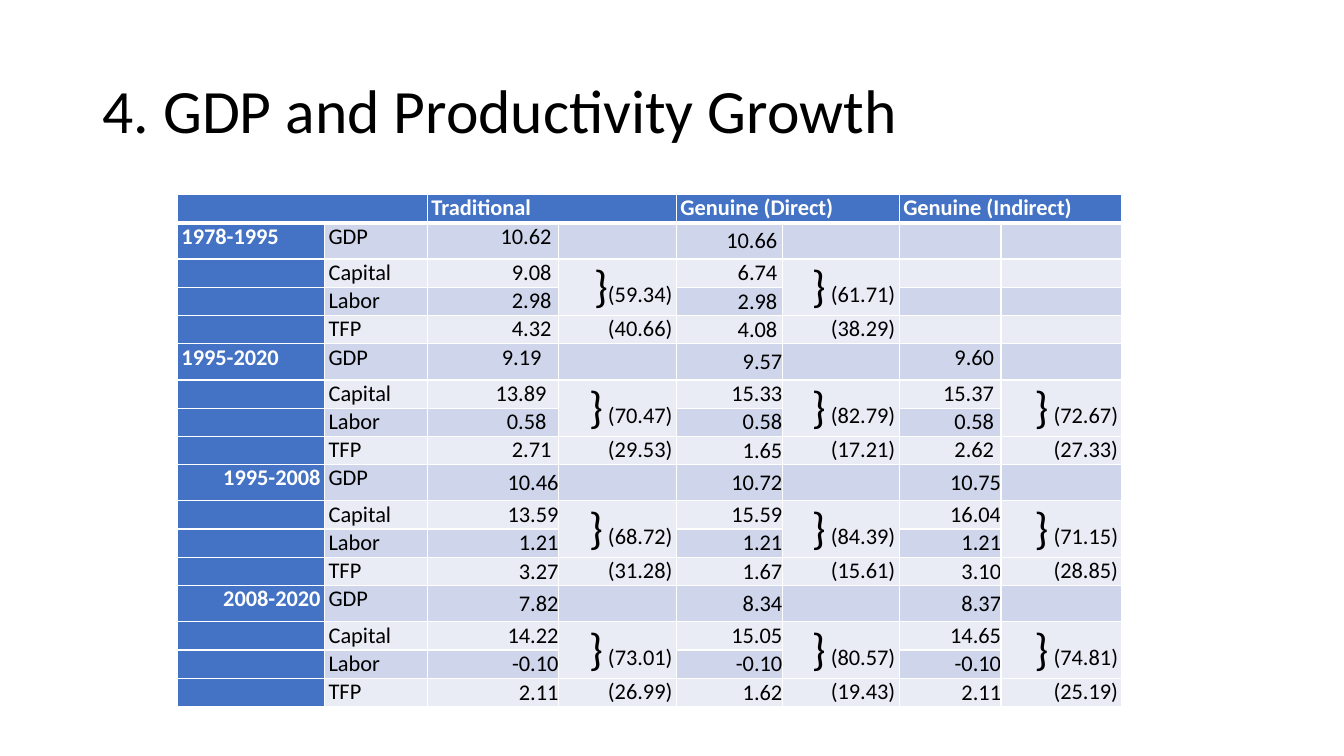
from lxml.etree import SubElement
from pptx import Presentation
from pptx.dml.color import RGBColor
from pptx.enum.text import MSO_ANCHOR as Anchor, PP_ALIGN as Align
from pptx.oxml.ns import qn
from pptx.util import Inches, Pt

TITLE = "4. GDP and Productivity Growth"
METHODS = ["Traditional", "Genuine (Direct)", "Genuine (Indirect)"]
MEASURES = ["GDP", "Capital", "Labor", "TFP"]
PERIODS = [
    ("1978-1995", Align.JUSTIFY, [
        (["10.62", "9.08", "2.98", "4.32"], "(59.34)", "(40.66)"),
        (["10.66", "6.74", "2.98", "4.08"], " (61.71)", "(38.29)"),
    ]),
    ("1995-2020", Align.JUSTIFY, [
        (["9.19", "13.89", "0.58", "2.71"], " (70.47)", "(29.53)"),
        (["9.57", "15.33", "0.58", "1.65"], " (82.79)", "(17.21)"),
        (["9.60", "15.37", "0.58", "2.62"], " (72.67)", "(27.33)"),
    ]),
    ("1995-2008", Align.RIGHT, [
        (["10.46", "13.59", "1.21", "3.27"], " (68.72)", "(31.28)"),
        (["10.72", "15.59", "1.21", "1.67"], " (84.39)", "(15.61)"),
        (["10.75", "16.04", "1.21", "3.10"], " (71.15)", "(28.85)"),
    ]),
    ("2008-2020", Align.RIGHT, [
        (["7.82", "14.22", "-0.10", "2.11"], " (73.01)", "(26.99)"),
        (["8.34", "15.05", "-0.10", "1.62"], " (80.57)", "(19.43)"),
        (["8.37", "14.65", "-0.10", "2.11"], " (74.81)", "(25.19)"),
    ]),
]
RIGHT_INSETS = {
    (0, 0): [0.07] * 4,
    (0, 1): [0.05] * 4,
    (1, 0): [0.17, 0.12, 0.12, 0.07],
    (1, 2): [0.07] * 4,
}
COLUMN_WIDTHS = [1.46, 1.02, 1.3, 1.17, 1.05, 1.16, 1.01, 1.2]
HEADER_HEIGHT = 0.28
MEASURE_HEIGHTS = [0.36, 0.28, 0.28, 0.28]
BLUE, DARK_BAND, LIGHT_BAND = "4472C4", "CFD5EA", "E9EBF5"
WHITE, BLACK = "FFFFFF", "000000"


def color(value):
    return RGBColor.from_string(value)


def write(frame, *pieces, size=16, tint=BLACK, bold=False, align=Align.RIGHT,
          anchor=Anchor.TOP, left=0.04, right=0.04, spacing=None):
    frame.margin_left, frame.margin_right = Inches(left), Inches(right)
    frame.vertical_anchor = anchor
    holder = getattr(frame, "text_frame", frame)
    holder.word_wrap = True
    para = holder.paragraphs[0]
    para.alignment = align
    if spacing:
        para.line_spacing = spacing
    for piece in pieces:
        text, points = piece if isinstance(piece, tuple) else (piece, size)
        span = para.add_run()
        span.text = text
        span.font.name = "Calibri"
        span.font.size = Pt(points)
        span.font.bold = bold
        span.font.color.rgb = color(tint)


def style_cell(cell, row, column):
    cell.margin_top = cell.margin_bottom = 0
    properties = cell._tc.get_or_add_tcPr()
    for side in "LRTB":
        thick = (row, side) in [(0, "B"), (1, "T")]
        line = SubElement(properties, qn(f"a:ln{side}"), w=str(Pt(3 if thick else 1)))
        fill = SubElement(line, qn("a:solidFill"))
        SubElement(fill, qn("a:srgbClr"), val=WHITE)
    cell.fill.solid()
    band = DARK_BAND if row % 2 else LIGHT_BAND
    cell.fill.fore_color.rgb = color(BLUE if row == 0 or column == 0 else band)
    SubElement(cell.text_frame.paragraphs[0]._p, qn("a:endParaRPr"), sz="1600")


def fill_period(table, index, label, align, results):
    top = 1 + index * len(MEASURES)
    write(table.cell(top, 0), label, tint=WHITE, bold=True, align=align)
    for offset, measure in enumerate(MEASURES):
        write(table.cell(top + offset, 1), measure, align=Align.JUSTIFY)
    for method, (values, inputs_share, tfp_share) in enumerate(results):
        column = 2 + 2 * method
        insets = RIGHT_INSETS.get((index, method), [0] * 4)
        for offset, (value, inset) in enumerate(zip(values, insets)):
            anchor = Anchor.TOP if inset >= 0.07 else Anchor.MIDDLE
            write(table.cell(top + offset, column), value,
                  anchor=anchor, left=0, right=inset)
        share = table.cell(top + 1, column + 1)
        share.merge(table.cell(top + 2, column + 1))
        write(share, ("}", 32), inputs_share, anchor=Anchor.MIDDLE)
        write(table.cell(top + 3, column + 1), tfp_share)


def main():
    deck = Presentation()
    deck.slide_width, deck.slide_height = Inches(13.33), Inches(7.5)
    page = deck.slides.add_slide(deck.slide_layouts[6])

    box = page.shapes.add_textbox(Inches(0.92), Inches(0.4), Inches(11.5), Inches(1.45))
    write(box.text_frame, TITLE, size=44, align=Align.LEFT, anchor=Anchor.MIDDLE,
          left=0.1, right=0.1, spacing=0.9)

    heights = [HEADER_HEIGHT] + MEASURE_HEIGHTS * len(PERIODS)
    table = page.shapes.add_table(
        len(heights), len(COLUMN_WIDTHS), Inches(1.76), Inches(1.93),
        Inches(sum(COLUMN_WIDTHS)), Inches(sum(heights))).table
    for column, width in zip(table.columns, COLUMN_WIDTHS):
        column.width = Inches(width)
    for row, height in enumerate(heights):
        table.rows[row].height = Inches(height)
        for column in range(len(COLUMN_WIDTHS)):
            style_cell(table.cell(row, column), row, column)

    for pair, heading in enumerate([""] + METHODS):
        cell = table.cell(0, 2 * pair)
        cell.merge(table.cell(0, 2 * pair + 1))
        if heading:
            write(cell, heading, tint=WHITE, bold=True, align=Align.JUSTIFY)
    for index, (label, align, results) in enumerate(PERIODS):
        fill_period(table, index, label, align, results)

    deck.save("out.pptx")


if __name__ == "__main__":
    main()
